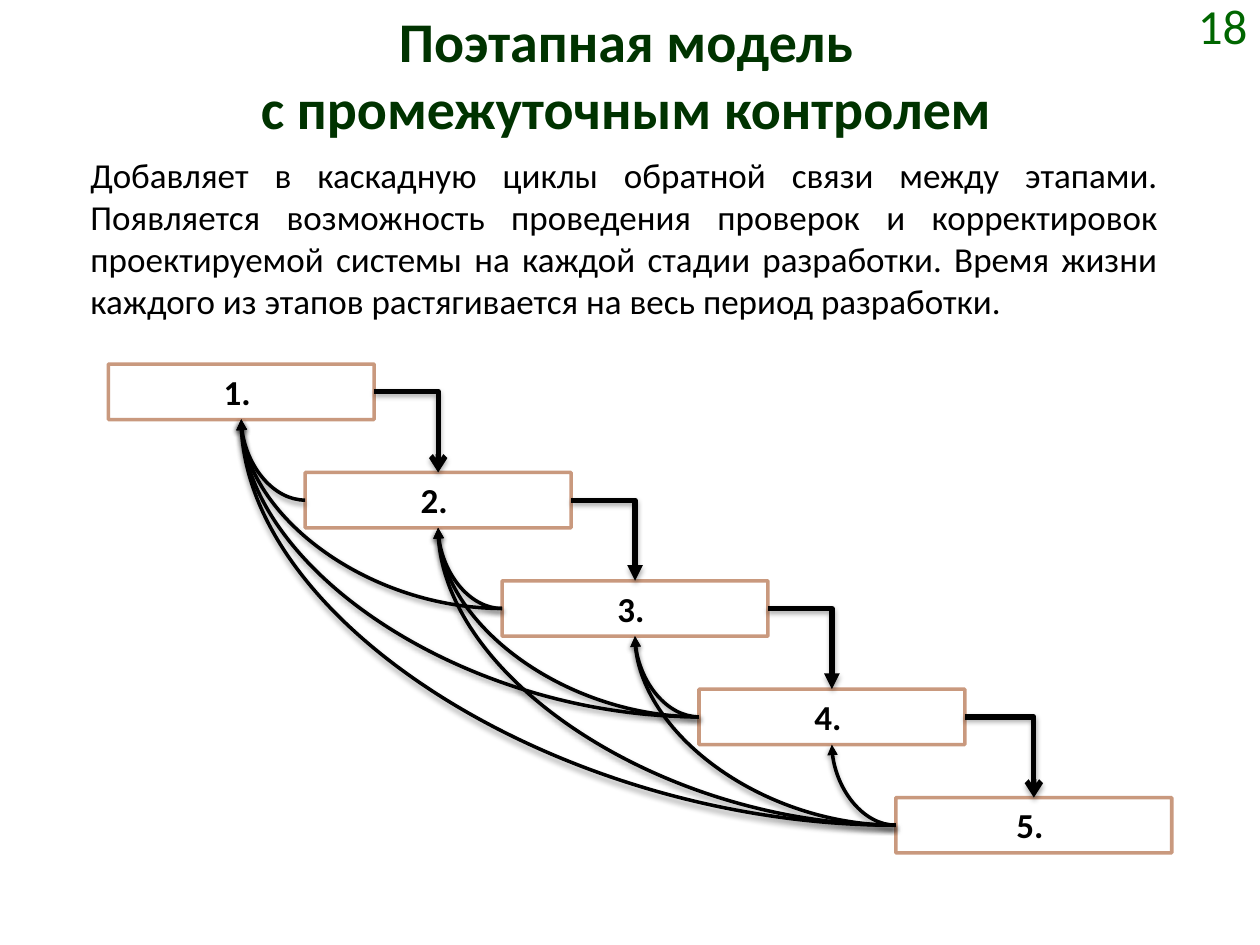
from dataclasses import dataclass
from itertools import combinations

import pptx
import pptx.dml.color
import pptx.enum.shapes
import pptx.enum.text
import pptx.oxml
import pptx.oxml.ns
import pptx.util
from pptx.util import Inches, Pt

RGBColor = pptx.dml.color.RGBColor
PP_ALIGN = pptx.enum.text.PP_ALIGN
MSO_ANCHOR = pptx.enum.text.MSO_ANCHOR
MSO_CONNECTOR = pptx.enum.shapes.MSO_CONNECTOR

DARK_GREEN = RGBColor(0x00, 0x33, 0x00)
GREEN = RGBColor(0x00, 0x66, 0x00)
BROWN = RGBColor(0xA6, 0x55, 0x28)
BLACK = RGBColor(0x00, 0x00, 0x00)
WHITE = RGBColor(0xFF, 0xFF, 0xFF)

FONT = "Calibri"
TOP, LEFT, BOTTOM, RIGHT = range(4)  # connection sites of a rectangle
STAGE_COUNT = 5
FIRST_LEFT, FIRST_TOP = 0.86, 2.89
STEP_X, STEP_Y = 6.25 / 4, 0.86
STAGE_WIDTH, LAST_WIDTH, STAGE_HEIGHT = 2.11, 2.19, 0.44


@dataclass(frozen=True)
class LinkStyle:
    kind: int
    preset: str
    width: float
    shadow_alpha: int
    shadow_distance: float
    from_site: int
    to_site: int


FORWARD = LinkStyle(MSO_CONNECTOR.ELBOW, "bentConnector2", 3, 35, 1.8, RIGHT, TOP)
FEEDBACK = LinkStyle(MSO_CONNECTOR.CURVE, "curvedConnector2", 2, 38, 1.6, LEFT, BOTTOM)


def write(shape, text: str, size: float, color, align, bold=False,
          space_before=0, anchor=MSO_ANCHOR.TOP) -> None:
    frame = shape.text_frame
    frame.text = text
    frame_format = {"word_wrap": True, "vertical_anchor": anchor,
                    "auto_size": pptx.enum.text.MSO_AUTO_SIZE.NONE}
    for name, value in frame_format.items():
        setattr(frame, name, value)
    font_format = {"name": FONT, "size": Pt(size), "bold": bold}
    for paragraph in frame.paragraphs:
        paragraph.alignment = align
        paragraph.space_before = Pt(space_before)
        for run in paragraph.runs:
            for name, value in font_format.items():
                setattr(run.font, name, value)
            run.font.color.rgb = color


def add_stage(slide, index: int):
    width = LAST_WIDTH if index == STAGE_COUNT - 1 else STAGE_WIDTH
    stage = slide.shapes.add_shape(
        pptx.enum.shapes.MSO_SHAPE.RECTANGLE,
        Inches(FIRST_LEFT + index * STEP_X), Inches(FIRST_TOP + index * STEP_Y),
        Inches(width), Inches(STAGE_HEIGHT))
    stage.shadow.inherit = False
    stage.fill.solid()
    stage.fill.fore_color.rgb = WHITE
    stage.line.color.rgb = BROWN
    stage.line.width = Pt(2)
    outline = stage.line._get_or_add_ln()
    tint = outline.find(".//" + pptx.oxml.ns.qn("a:srgbClr"))
    tint.append(pptx.oxml.parse_xml(
        f'<a:alpha {pptx.oxml.ns.nsdecls("a")} val="60000"/>'))
    outline.append(pptx.oxml.parse_xml(f'<a:round {pptx.oxml.ns.nsdecls("a")}/>'))
    write(stage, f"{index + 1}. ", 20, BLACK, PP_ALIGN.CENTER, bold=True,
          space_before=12 if index < 3 else 0)
    return stage


def link(slide, start, end, style: LinkStyle, head: str = "triangle") -> None:
    connector = slide.shapes.add_connector(style.kind, 0, 0, 0, 0)
    connector.begin_connect(start, style.from_site)
    connector.end_connect(end, style.to_site)
    connector.line.color.rgb = BLACK
    connector.line.width = Pt(style.width)
    namespace = pptx.oxml.ns.nsdecls("a")
    properties = connector._element.spPr
    properties.find(pptx.oxml.ns.qn("a:prstGeom")).set("prst", style.preset)
    connector.line._get_or_add_ln().append(
        pptx.oxml.parse_xml(f'<a:tailEnd {namespace} type="{head}"/>'))
    properties.append(pptx.oxml.parse_xml(
        f'<a:effectLst {namespace}><a:outerShdw blurRad="{Pt(3.1)}" '
        f'dist="{Pt(style.shadow_distance)}" dir="5400000" rotWithShape="0">'
        f'<a:srgbClr val="{BLACK}"><a:alpha val="{style.shadow_alpha * 1000}"/>'
        '</a:srgbClr></a:outerShdw></a:effectLst>'))


def main() -> None:
    deck = pptx.Presentation()
    deck.slide_width, deck.slide_height = Inches(10), Inches(7.5)
    slide = deck.slides.add_slide(deck.slide_layouts[5])

    title = slide.shapes.title
    title_place = {"left": 0.47, "top": 0, "width": 9, "height": 0.94}
    for name, value in title_place.items():
        setattr(title, name, Inches(value))
    write(title, "Поэтапная модель\vс промежуточным контролем", 32, DARK_GREEN,
          PP_ALIGN.CENTER, bold=True)

    page_number = slide.shapes.add_textbox(Inches(8.98), 0, Inches(1.02), Inches(0.39))
    write(page_number, "18", 28, GREEN, PP_ALIGN.RIGHT, anchor=MSO_ANCHOR.MIDDLE)

    description = slide.shapes.add_textbox(
        Inches(0.62), Inches(1.17), Inches(8.67), Inches(1.45))
    write(description,
          "Добавляет в каскадную циклы обратной связи между этапами. "
          "Появляется возможность проведения проверок и корректировок "
          "проектируемой системы на каждой стадии разработки. Время жизни "
          "каждого из этапов растягивается на весь период разработки.",
          20, BLACK, PP_ALIGN.JUSTIFY, space_before=12)

    stages = [add_stage(slide, index) for index in range(STAGE_COUNT)]
    heads = ("arrow", "triangle", "triangle", "arrow")
    for earlier, later, head in zip(stages, stages[1:], heads):
        link(slide, earlier, later, FORWARD, head)
    for earlier, later in combinations(stages, 2):
        link(slide, later, earlier, FEEDBACK)

    deck.save("out.pptx")


if __name__ == "__main__":
    main()
